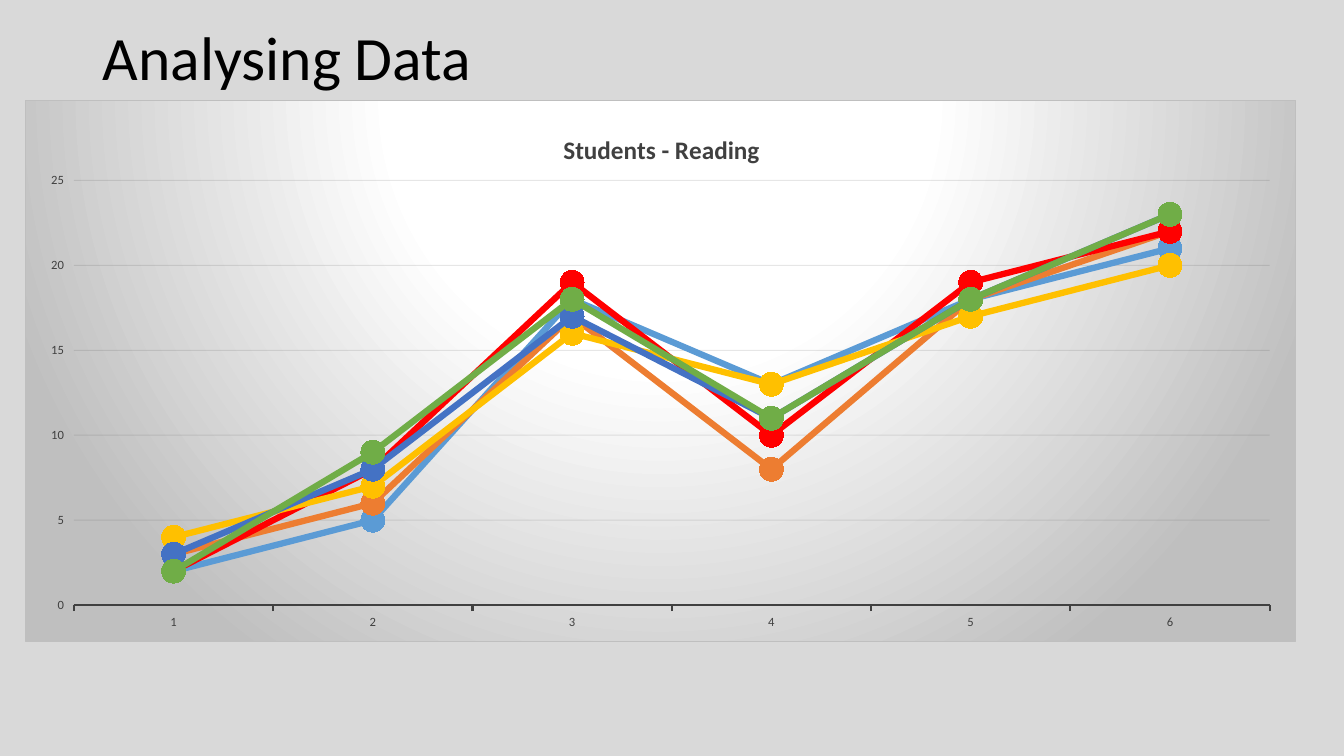
from lxml import etree
from pptx import Presentation
from pptx.chart.data import CategoryChartData
from pptx.dml.color import RGBColor
from pptx.enum.chart import XL_CHART_TYPE, XL_MARKER_STYLE, XL_TICK_MARK
from pptx.enum.text import MSO_ANCHOR
from pptx.oxml import parse_xml
from pptx.oxml.ns import qn
from pptx.util import Inches, Pt

LINE_MARKERS = XL_CHART_TYPE.LINE_MARKERS
CIRCLE = XL_MARKER_STYLE.CIRCLE
TICK_OUT = XL_TICK_MARK.OUTSIDE
TICK_NONE = XL_TICK_MARK.NONE
MIDDLE = MSO_ANCHOR.MIDDLE

FONT = "Calibri"
BLACK = RGBColor(0x00, 0x00, 0x00)
BACKDROP = RGBColor(0xD9, 0xD9, 0xD9)
AXIS_GREY = RGBColor(0x40, 0x40, 0x40)
GRID_GREY = RGBColor(0x0D, 0x0D, 0x0D)
BLUE = RGBColor(0x5B, 0x9B, 0xD5)
ORANGE = RGBColor(0xED, 0x7D, 0x31)
RED = RGBColor(0xFF, 0x00, 0x00)
GOLD = RGBColor(0xFF, 0xC0, 0x00)
INDIGO = RGBColor(0x44, 0x72, 0xC4)
GREEN = RGBColor(0x70, 0xAD, 0x47)

SLIDE_BOX = (13.33, 7.5)
TITLE_BOX = (0.92, 0.12, 11.5, 0.97)
CHART_BOX = (0.25, 0.99, 12.6, 5.38)

TESTS = ["1", "2", "3", "4", "5", "6"]
STUDENT_SCORES = [
    (BLUE, (2, 5, 18, 13, 18, 21)),
    (ORANGE, (3, 6, 17, 8, 18, 22)),
    (RED, (2, 8, 19, 10, 19, 22)),
    (GOLD, (4, 7, 16, 13, 17, 20)),
    (INDIGO, (3, 8, 17, 11, 18, 23)),
    (GREEN, (2, 9, 18, 11, 18, 23)),
]

CHART_NS = "http://schemas.openxmlformats.org/drawingml/2006/chart"
DRAWING_NS = "http://schemas.openxmlformats.org/drawingml/2006/main"
CHART_AREA = f"""
<c:spPr xmlns:c="{CHART_NS}" xmlns:a="{DRAWING_NS}">
  <a:gradFill rotWithShape="1">
    <a:gsLst>
      <a:gs pos="0"><a:srgbClr val="FFFFFF"/></a:gs>
      <a:gs pos="39000"><a:srgbClr val="FFFFFF"/></a:gs>
      <a:gs pos="100000"><a:srgbClr val="BFBFBF"/></a:gs>
    </a:gsLst>
    <a:path path="circle"><a:fillToRect l="50000" t="-80000" r="50000" b="180000"/></a:path>
  </a:gradFill>
  <a:ln w="9525"><a:solidFill><a:srgbClr val="BFBFBF"/></a:solidFill></a:ln>
</c:spPr>"""


def style_font(font, size, color, bold=False):
    """Apply the slide's typeface with a size, colour and weight."""
    font.name, font.size, font.bold = FONT, Pt(size), bold
    font.color.rgb = color


def make_layout(**settings):
    """Return a manual chart layout made of the given settings."""
    layout = etree.Element(qn("c:layout"))
    manual = etree.SubElement(layout, qn("c:manualLayout"))
    for setting, value in settings.items():
        etree.SubElement(manual, qn(f"c:{setting}")).set("val", str(value))
    return layout


def drop_layout(part):
    """Remove any layout a chart part already has."""
    for layout in part.findall(qn("c:layout")):
        part.remove(layout)


def add_heading(slide, box):
    """Place the slide heading in its box."""
    heading = slide.shapes.add_textbox(*map(Inches, box))
    frame = heading.text_frame
    frame.word_wrap = True
    frame.vertical_anchor = MIDDLE
    frame.text = "Analysing Data"
    frame.paragraphs[0].line_spacing = 0.9
    style_font(frame.paragraphs[0].runs[0].font, 44, BLACK)


def style_axes(chart):
    """Format the test axis, the score axis and its faint gridlines."""
    tests, scores = chart.category_axis, chart.value_axis
    for axis in (tests, scores):
        axis.major_tick_mark, axis.minor_tick_mark = TICK_OUT, TICK_NONE
        style_font(axis.tick_labels.font, 9, AXIS_GREY)
    tests.has_major_gridlines = False
    tests.format.line.color.rgb = AXIS_GREY
    tests.format.line.width = Pt(1.5)
    scores.minimum_scale, scores.maximum_scale, scores.major_unit = 0, 25, 5
    scores.format.line.fill.background()
    scores.has_major_gridlines = True
    grid = scores.major_gridlines.format.line
    grid.color.rgb = GRID_GREY
    grid.width = Pt(0.75)
    grid_color = scores.major_gridlines._xAx.find(
        f"{qn('c:majorGridlines')}//{qn('a:srgbClr')}")
    etree.SubElement(grid_color, qn("a:alpha")).set("val", "10000")


def style_student(series, color):
    """Draw one student's line and markers in a single colour."""
    series.smooth = False
    series.format.line.color.rgb = color
    series.format.line.width = Pt(4.5)
    marker = series.marker
    marker.style, marker.size = CIRCLE, 17
    marker.format.fill.solid()
    marker.format.fill.fore_color.rgb = color
    marker.format.line.fill.background()


def add_reading_chart(slide, box):
    """Place the line chart of reading scores in its box."""
    data = CategoryChartData()
    data.categories = TESTS
    for number, (_, scores) in enumerate(STUDENT_SCORES, 1):
        data.add_series(f"Series {number}", scores)
    chart = slide.shapes.add_chart(LINE_MARKERS, *map(Inches, box), data).chart
    chart.has_legend = False
    style_font(chart.font, 10, BLACK)
    chart.plots[0].vary_by_categories = False
    for series, (color, _) in zip(chart.plots[0].series, STUDENT_SCORES):
        style_student(series, color)
    style_axes(chart)

    chart.has_title = True
    caption = chart.chart_title.text_frame
    caption.text = "Students - Reading"
    style_font(caption.paragraphs[0].runs[0].font, 18, AXIS_GREY, bold=True)

    space = chart.element if hasattr(chart, "element") else chart._chartSpace
    title = space.find(f".//{qn('c:title')}")
    drop_layout(title)
    title.find(qn("c:tx")).addnext(
        make_layout(xMode="edge", yMode="edge", x=0.42, y=0.05))
    plot_area = space.find(f".//{qn('c:plotArea')}")
    drop_layout(plot_area)
    plot_area.insert(0, make_layout(
        layoutTarget="inner", xMode="edge", yMode="edge",
        x=0.038, y=0.148, w=0.942, h=0.785))
    space.find(qn("c:chart")).addnext(parse_xml(CHART_AREA))


def main():
    """Build and save the slide."""
    deck = Presentation()
    deck.slide_width, deck.slide_height = map(Inches, SLIDE_BOX)
    slide = deck.slides.add_slide(deck.slide_layouts[6])
    slide.background.fill.solid()
    slide.background.fill.fore_color.rgb = BACKDROP
    add_heading(slide, TITLE_BOX)
    add_reading_chart(slide, CHART_BOX)
    deck.save("out.pptx")


if __name__ == "__main__":
    main()
